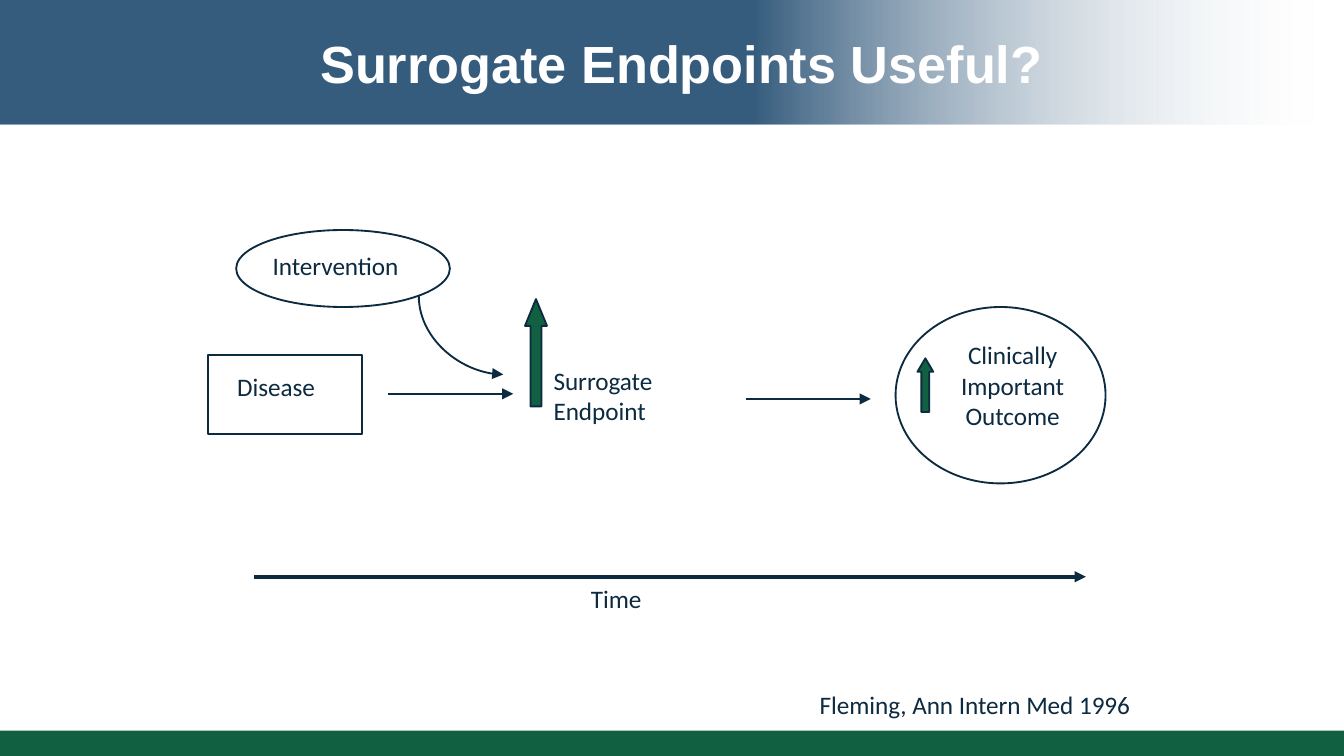
import pptx
import pptx.dml.color
import pptx.enum.shapes
import pptx.enum.text
import pptx.oxml
import pptx.oxml.ns
import pptx.util
import lxml.etree

Pt = pptx.util.Pt
SHAPE = pptx.enum.shapes.MSO_SHAPE
CONNECTOR = pptx.enum.shapes.MSO_CONNECTOR
ALIGN = pptx.enum.text.PP_ALIGN
ANCHOR = pptx.enum.text.MSO_ANCHOR
qn = pptx.oxml.ns.qn

NAVY, GREEN, BLUE, WHITE = "0C2A40", "106041", "113F66", "FFFFFF"


def color(hex_code):
    return pptx.dml.color.RGBColor.from_string(hex_code)


def add_text(text, left, top, width, height, size=13.5, font="Calibri", fill=NAVY,
             bold=False, align=ALIGN.LEFT, anchor=ANCHOR.TOP, wrap=True):
    """Place a one-paragraph text box and return its run."""
    frame = slide.shapes.add_textbox(Pt(left), Pt(top), Pt(width), Pt(height)).text_frame
    frame.word_wrap = wrap
    frame.vertical_anchor = anchor
    paragraph = frame.paragraphs[0]
    paragraph.alignment = align
    run = paragraph.add_run()
    run.text = text
    run.font.size = Pt(size)
    run.font.name = font
    run.font.bold = bold
    run.font.color.rgb = color(fill)
    return run


deck = pptx.Presentation()
deck.slide_width, deck.slide_height = Pt(720), Pt(405)
slide = deck.slides.add_slide(deck.slide_layouts[6])

# Header, body and footer bands
bands = []
for top, height, fill in [(0, 66.5, BLUE), (66.8, 338.2, WHITE), (391.5, 13.5, GREEN)]:
    band = slide.shapes.add_shape(SHAPE.RECTANGLE, 0, Pt(top), Pt(720), Pt(height))
    band.shadow.inherit = False
    band.fill.solid()
    band.fill.fore_color.rgb = color(fill)
    band.line.fill.background()
    bands.append(band)
header, body, footer = bands

header.fill.gradient()
header.fill.gradient_angle = 0
for stop, position, fill in zip(header.fill.gradient_stops, (0.56, 1), (BLUE, WHITE)):
    stop.position = position
    stop.color.rgb = color(fill)

for band, opacities in [(header, (84, 0)), (body, (95,))]:
    for tint, opacity in zip(band._element.spPr.iter(qn("a:srgbClr")), opacities):
        lxml.etree.SubElement(tint, qn("a:alpha")).set("val", str(opacity * 1000))

title = add_text("Surrogate Endpoints Useful?", 35, 0, 660, 67, size=28, font="Arial",
                 fill=WHITE, bold=True, align=ALIGN.CENTER, anchor=ANCHOR.MIDDLE)
title_shadow = pptx.oxml.parse_xml(
    '<a:effectLst xmlns:a="http://schemas.openxmlformats.org/drawingml/2006/main">'
    '<a:outerShdw blurRad="38100" dist="38100" dir="2700000" algn="tl">'
    '<a:srgbClr val="000000"><a:alpha val="43000"/></a:srgbClr>'
    '</a:outerShdw></a:effectLst>')
title.font._element.find(qn("a:solidFill")).addnext(title_shadow)

# Outlined nodes and the green "increase" arrows
for kind, left, top, width, height, fill, adjustments in [
    (SHAPE.RECTANGLE, 111.5, 190, 82.5, 42.5, None, ()),
    (SHAPE.OVAL, 479.75, 164.5, 112.5, 94.5, None, ()),
    (SHAPE.OVAL, 126.5, 123.25, 114.5, 41.25, None, ()),
    (SHAPE.UP_ARROW, 281.25, 160.25, 11.75, 57.5, GREEN, (0.5, 1.22)),
    (SHAPE.UP_ARROW, 491.5, 192, 8.5, 28.75, GREEN, (0.5, 0.85)),
]:
    node = slide.shapes.add_shape(kind, Pt(left), Pt(top), Pt(width), Pt(height))
    node.shadow.inherit = False
    if fill:
        node.fill.solid()
        node.fill.fore_color.rgb = color(fill)
    else:
        node.fill.background()
    node.line.color.rgb = color(NAVY)
    node.line.width = Pt(1)
    for index, value in enumerate(adjustments):
        node.adjustments[index] = value

# Causal arrows and the time axis
for kind, x1, y1, x2, y2, weight in [
    (CONNECTOR.STRAIGHT, 136, 309, 581.75, 309, 2),
    (CONNECTOR.STRAIGHT, 208, 211, 275, 211, 1),
    (CONNECTOR.STRAIGHT, 399.5, 213.75, 466.5, 213.75, 1),
    (CONNECTOR.CURVE, 268, 157, 226, 202.25, 1),
]:
    arrow = slide.shapes.add_connector(kind, Pt(x1), Pt(y1), Pt(x2), Pt(y2))
    arrow.line.color.rgb = color(NAVY)
    arrow.line.width = Pt(weight)
    properties = arrow._element.spPr
    lxml.etree.SubElement(properties.find(qn("a:ln")), qn("a:tailEnd")).set("type", "triangle")
    lxml.etree.SubElement(properties, qn("a:effectLst"))
    if kind == CONNECTOR.CURVE:
        # A quarter-turn bend that leaves downwards and arrives from the left
        properties.find(qn("a:prstGeom")).set("prst", "curvedConnector2")
        properties.find(qn("a:xfrm")).set("rot", str(270 * 60000))

# Labels
add_text("Intervention", 139, 130.5, 83.5, 24, wrap=False)
add_text("Disease", 120, 195.25, 67, 24)
add_text("Surrogate Endpoint", 289.5, 192, 116, 40)
add_text("Clinically Important Outcome", 501, 178.5, 83, 56, align=ALIGN.CENTER)
add_text("Time", 309.5, 309, 119, 24)
add_text("Fleming, Ann Intern Med 1996", 432, 366, 231, 24)

deck.save("out.pptx")
